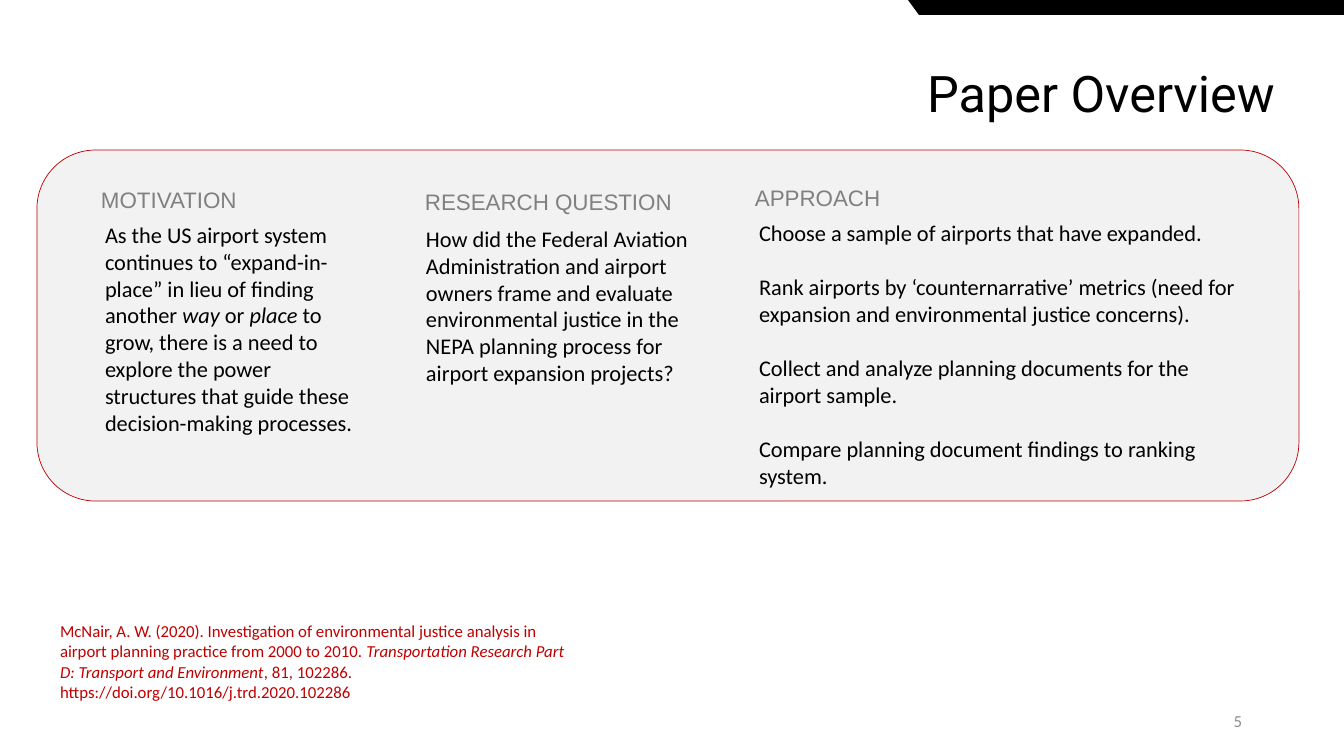
from pptx import Presentation
from pptx.dml.color import RGBColor
from pptx.enum.shapes import MSO_SHAPE
from pptx.enum.text import MSO_ANCHOR, PP_ALIGN
from pptx.util import Pt

EMU_PER_PX = 914400 / 100.8
SLIDE_WIDTH, SLIDE_HEIGHT = 1344, 756
LEFT, RIGHT = PP_ALIGN.LEFT, PP_ALIGN.RIGHT
TOP, MIDDLE = MSO_ANCHOR.TOP, MSO_ANCHOR.MIDDLE
ROUNDED_RECTANGLE = MSO_SHAPE.ROUNDED_RECTANGLE
BLACK, RED, PANEL_GRAY = "000000", "C00000", "F2F2F2"
HEADING_GRAY, NUMBER_GRAY = "808080", "8C8C8C"
BODY_SIZE = 16
BODY_LINE = 19.5  # points, height of one line of body text


def px(length):
    return round(length * EMU_PER_PX)


def add_text(box, paragraphs, size=BODY_SIZE, font="Calibri", color=BLACK, align=LEFT,
             anchor=TOP, line_spacing=None, gap=0, inset=10):
    """Add a text box; each paragraph is a list of runs, every second run in italics."""
    text_frame = slide.shapes.add_textbox(*map(px, box)).text_frame
    text_frame.word_wrap = True
    text_frame.vertical_anchor = anchor
    text_frame.margin_left = px(inset)
    for index, runs in enumerate(paragraphs):
        paragraph = text_frame.add_paragraph() if index else text_frame.paragraphs[0]
        paragraph.alignment = align
        if line_spacing:
            paragraph.line_spacing = line_spacing
        if index:
            paragraph.space_before = Pt(gap)
        for position, text in enumerate(runs):
            run = paragraph.add_run()
            run.text = text
            run.font.name = font
            run.font.size = Pt(size)
            run.font.italic = position % 2 == 1
            run.font.color.rgb = RGBColor.from_string(color)


presentation = Presentation()
presentation.slide_width = px(SLIDE_WIDTH)
presentation.slide_height = px(SLIDE_HEIGHT)
slide = presentation.slides.add_slide(presentation.slide_layouts[6])

# Title and corner band
add_text((50, 64, 1235, 66), [["Paper Overview"]], size=36, font="Roboto",
         align=RIGHT, line_spacing=0.9)

builder = slide.shapes.build_freeform(919, 15, scale=EMU_PER_PX)
builder.add_line_segments([(SLIDE_WIDTH, 15), (SLIDE_WIDTH, 0), (908, 0)], close=True)
corner_band = builder.convert_to_shape()
corner_band.shadow.inherit = False
corner_band.fill.solid()
corner_band.fill.fore_color.rgb = RGBColor.from_string(BLACK)
corner_band.line.fill.background()

# Citation
add_text((50, 616, 533, 92), [[
    "McNair, A. W. (2020). Investigation of environmental justice analysis in airport "
    "planning practice from 2000 to 2010. ",
    "Transportation Research Part D: Transport and Environment",
    ", 81, 102286. https://doi.org/10.1016/j.trd.2020.102286",
]], size=12, color=RED)

# Panel with three columns
panel = slide.shapes.add_shape(ROUNDED_RECTANGLE, px(37), px(150), px(1262), px(351))
panel.shadow.inherit = False
panel.fill.solid()
panel.fill.fore_color.rgb = RGBColor.from_string(PANEL_GRAY)
panel.line.color.rgb = RGBColor.from_string(RED)
panel.line.width = Pt(0.5)

columns = [
    ("MOTIVATION", (91, 181, 253, 37), (91, 216, 283, 228), [[
        "As the US airport system continues to “expand-in-place” in lieu of finding another ",
        "way", " or ", "place",
        " to grow, there is a need to explore the power structures that guide these "
        "decision-making processes.",
    ]]),
    ("RESEARCH QUESTION", (415, 183, 399, 37), (412, 220, 294, 174), [[
        "How did the Federal Aviation Administration and airport owners frame and evaluate "
        "environmental justice in the NEPA planning process for airport expansion projects?",
    ]]),
    ("APPROACH", (745, 179, 314, 37), (745, 214, 513, 281), [
        ["Choose a sample of airports that have expanded."],
        ["Rank airports by ‘counternarrative’ metrics (need for expansion and "
         "environmental justice concerns)."],
        ["Collect and analyze planning documents for the airport sample."],
        ["Compare planning document findings to ranking system."],
    ]),
]
for heading, heading_box, body_box, body in columns:
    add_text(heading_box, [[heading]], font="Arial", color=HEADING_GRAY)
    add_text(body_box, body, gap=BODY_LINE, inset=14)

# Slide number
add_text((950, 701, 302, 40), [["5"]], size=12, color=NUMBER_GRAY, align=RIGHT, anchor=MIDDLE)

presentation.save("out.pptx")
